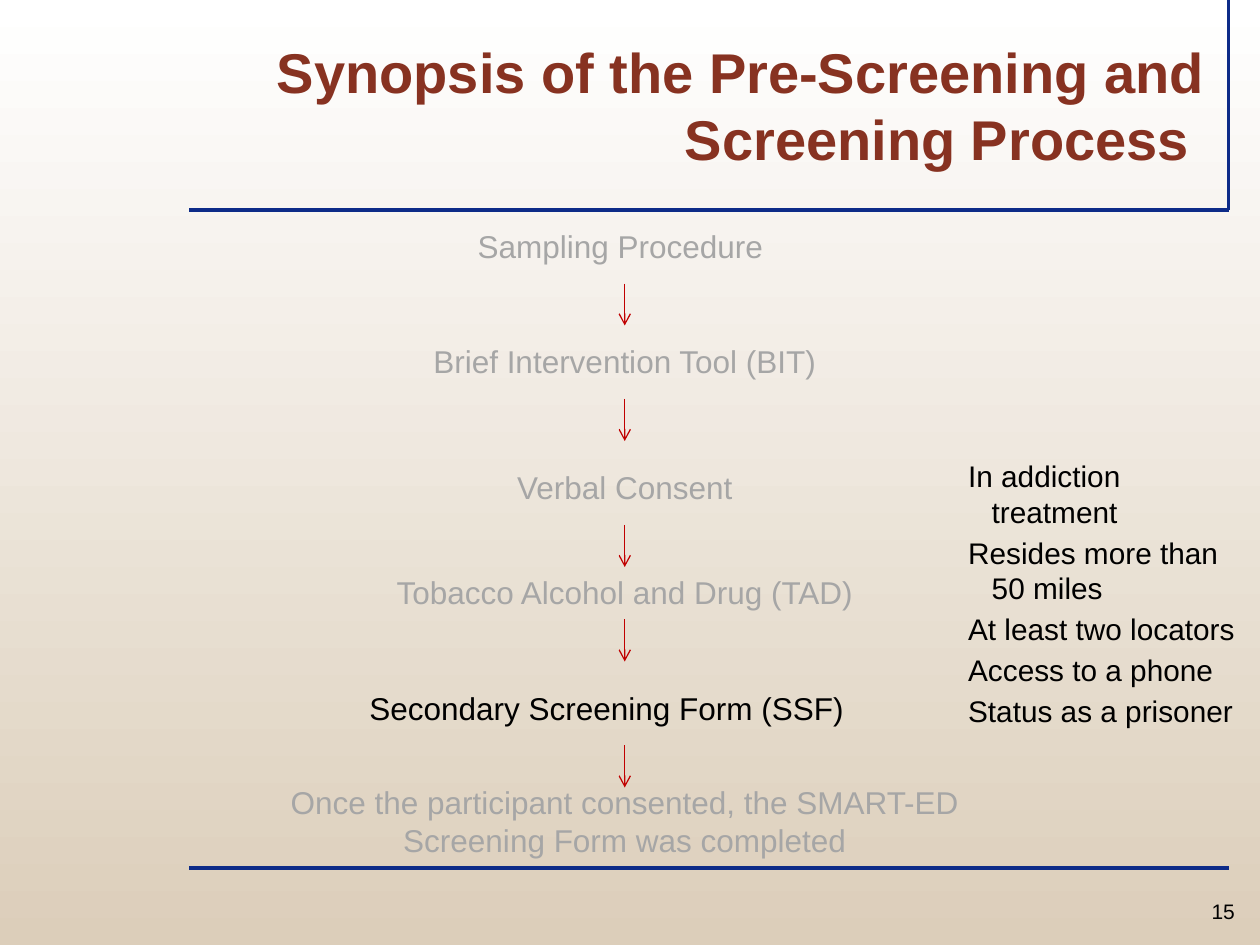
from dataclasses import dataclass

from lxml.etree import SubElement
from pptx import Presentation
from pptx.dml.color import RGBColor
from pptx.enum.shapes import MSO_CONNECTOR
from pptx.enum.text import MSO_ANCHOR, MSO_AUTO_SIZE, PP_ALIGN
from pptx.oxml.ns import qn
from pptx.util import Pt


@dataclass(frozen=True)
class Theme:
    font: str = "Arial"
    title: str = "873221"
    text: str = "000000"
    muted: str = "A6A6A6"
    rule: str = "0D2B88"
    arrow: str = "C00000"
    top: str = "FFFFFF"
    bottom: str = "DCCEBA"
    title_size: float = 32
    step_size: float = 18
    criteria_size: float = 17
    number_size: float = 12
    rule_width: float = 2.25
    arrow_width: float = 0.75


THEME = Theme()
STEP_HEIGHT = 30
ARROW_LENGTH = 24

STEPS = [
    (["Sampling Procedure "], 0, 198, THEME.muted, PP_ALIGN.CENTER),
    (["Brief Intervention Tool (BIT)"], 66, 252, THEME.muted, PP_ALIGN.CENTER),
    (["Verbal Consent"], 138, 162, THEME.muted, PP_ALIGN.CENTER),
    (["Tobacco Alcohol and Drug (TAD)"], 198, 300, THEME.muted, PP_ALIGN.CENTER),
    (["Secondary Screening Form (SSF)"], 264, 306, THEME.text, PP_ALIGN.LEFT),
    (["Once the participant consented, the SMART-ED", "Screening Form was completed"],
     318, 606, THEME.muted, PP_ALIGN.CENTER),
]
ARROW_TOPS = [36, 102, 174, 228, 300]

CRITERIA = [
    ("In addiction treatment", 13.5),
    ("Resides more than 50 miles", 13.5),
    ("At least two locators", 13.5),
    ("Access to a phone", 0),
    ("Status as a prisoner", 0),
]


def apply_format(target, values):
    for name, value in values.items():
        setattr(target, name, value)


def place(shape, box):
    names = ("left", "top", "width", "height")
    apply_format(shape, {name: Pt(value) for name, value in zip(names, box)})


def style_font(font, size, color, bold=False):
    apply_format(font, {"name": THEME.font, "size": Pt(size), "bold": bold})
    font.color.rgb = RGBColor.from_string(color)


def add_text(slide, box, lines, size, color, align):
    label = slide.shapes.add_textbox(*map(Pt, box))
    frame = label.text_frame
    apply_format(frame, {"word_wrap": True, "auto_size": MSO_AUTO_SIZE.SHAPE_TO_FIT_TEXT})
    frame.text = "\n".join(lines)
    for paragraph in frame.paragraphs:
        paragraph.alignment = align
        style_font(paragraph.font, size, color)
    return label


def add_line(slide, start, end, color, width, head=None):
    line = slide.shapes.add_connector(MSO_CONNECTOR.STRAIGHT, *map(Pt, start + end))
    line.line.color.rgb = RGBColor.from_string(color)
    line.line.width = Pt(width)
    properties = line._element.spPr
    if head:
        SubElement(properties.find(qn("a:ln")), qn("a:tailEnd"), type=head)
    SubElement(properties, qn("a:effectLst"))
    return line


def add_backdrop(slide):
    fill = slide.background.fill
    fill.gradient()
    fill.gradient_angle = 270
    for stop, color in zip(fill.gradient_stops, (THEME.top, THEME.bottom)):
        stop.color.rgb = RGBColor.from_string(color)


def add_frame(slide, box):
    left, top, width, height = box
    right, title_rule, bottom = left + width, top + 120, top + height
    for start, end in (
        ((right, top), (right, title_rule)),
        ((left, title_rule), (right, title_rule)),
        ((left, bottom), (right, bottom)),
    ):
        add_line(slide, start, end, THEME.rule, THEME.rule_width)


def add_title(slide, box):
    title = slide.shapes.title
    place(title, box)
    frame = title.text_frame
    frame.text = "Synopsis of the Pre-Screening and Screening Process "
    apply_format(frame, {
        "word_wrap": True,
        "auto_size": MSO_AUTO_SIZE.NONE,
        "vertical_anchor": MSO_ANCHOR.BOTTOM,
    })
    paragraph = frame.paragraphs[0]
    paragraph.alignment = PP_ALIGN.RIGHT
    style_font(paragraph.font, THEME.title_size, THEME.title, bold=True)


def add_flow(slide, box):
    left, top, width, _ = box
    center = left + width / 2
    steps = {}
    for lines, offset, step_width, color, align in STEPS:
        height = STEP_HEIGHT if len(lines) == 1 else 51
        step_box = (center - step_width / 2, top + offset, step_width, height)
        steps[offset] = add_text(slide, step_box, lines, THEME.step_size, color, align)
    for offset in ARROW_TOPS:
        start = top + offset
        arrow = add_line(slide, (center, start), (center, start + ARROW_LENGTH),
                         THEME.arrow, THEME.arrow_width, head="arrow")
        if offset - STEP_HEIGHT in steps:
            arrow.begin_connect(steps[offset - STEP_HEIGHT], 2)
        if offset + ARROW_LENGTH in steps:
            arrow.end_connect(steps[offset + ARROW_LENGTH], 0)


def add_criteria(slide, box):
    body = slide.placeholders[1]
    place(body, box)
    frame = body.text_frame
    apply_format(frame, {
        "word_wrap": True,
        "auto_size": MSO_AUTO_SIZE.NONE,
        "vertical_anchor": MSO_ANCHOR.TOP,
    })
    frame.text = "\n".join(text for text, _ in CRITERIA)
    for paragraph, (_, hanging) in zip(frame.paragraphs, CRITERIA):
        properties = paragraph._p.get_or_add_pPr()
        properties.set("marL", str(Pt(108 + hanging)))
        properties.set("indent", str(Pt(-hanging)))
        SubElement(properties, qn("a:buNone"))
        apply_format(paragraph, {
            "level": 3,
            "alignment": PP_ALIGN.LEFT,
            "space_before": Pt(0),
            "space_after": Pt(3),
        })
        style_font(paragraph.font, THEME.criteria_size, THEME.text)


def main():
    deck = Presentation()
    apply_format(deck, {"slide_width": Pt(720), "slide_height": Pt(540)})
    slide = deck.slides.add_slide(deck.slide_layouts[1])
    add_backdrop(slide)
    add_frame(slide, (108, 0, 594, 496))
    add_text(slide, (678, 510, 42, 22), ["15"], THEME.number_size, THEME.text, PP_ALIGN.CENTER)
    add_title(slide, (36, 0, 660, 102))
    add_flow(slide, (54, 126, 606, 369))
    add_criteria(slide, (438, 258, 282, 163))
    deck.save("out.pptx")


if __name__ == "__main__":
    main()
